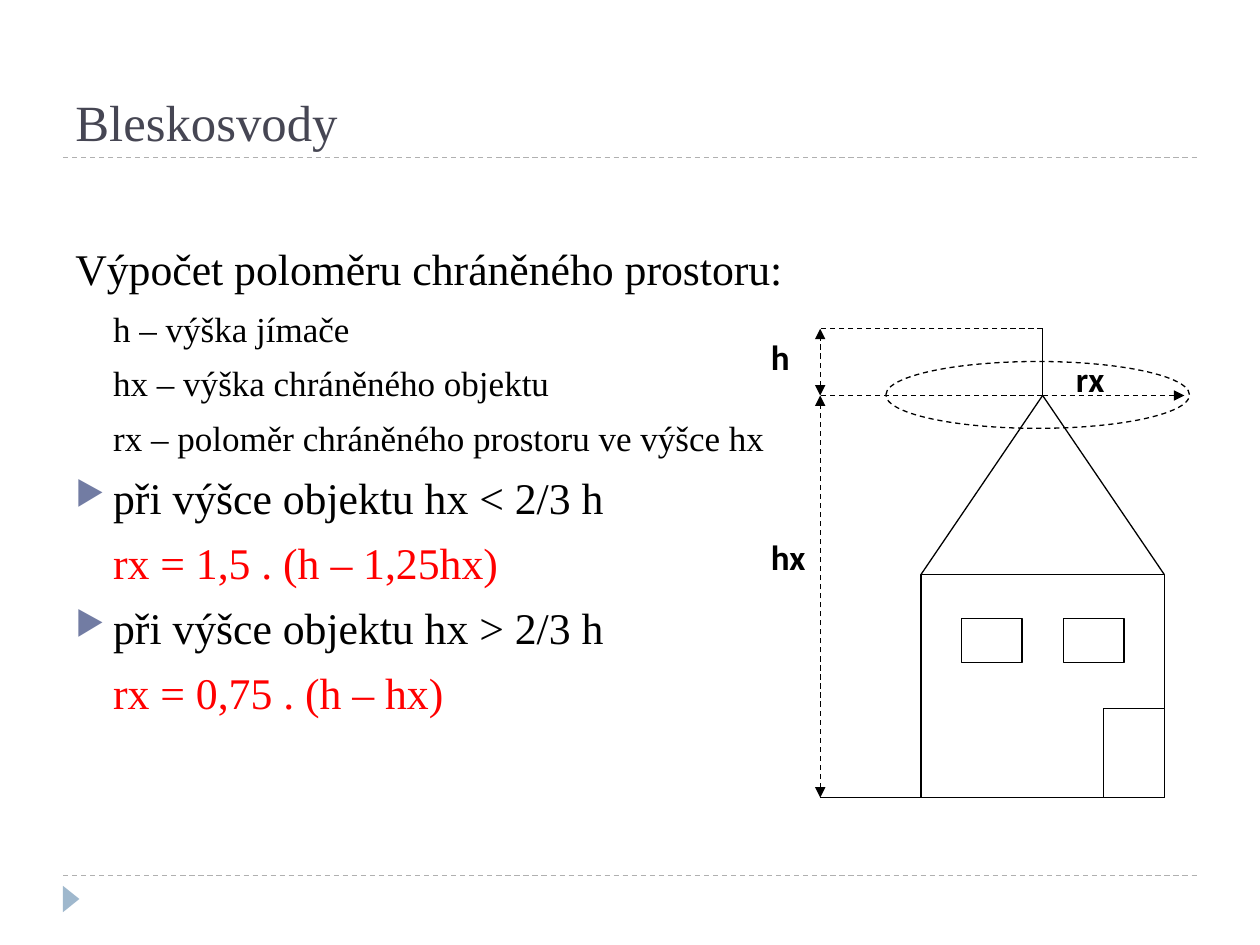
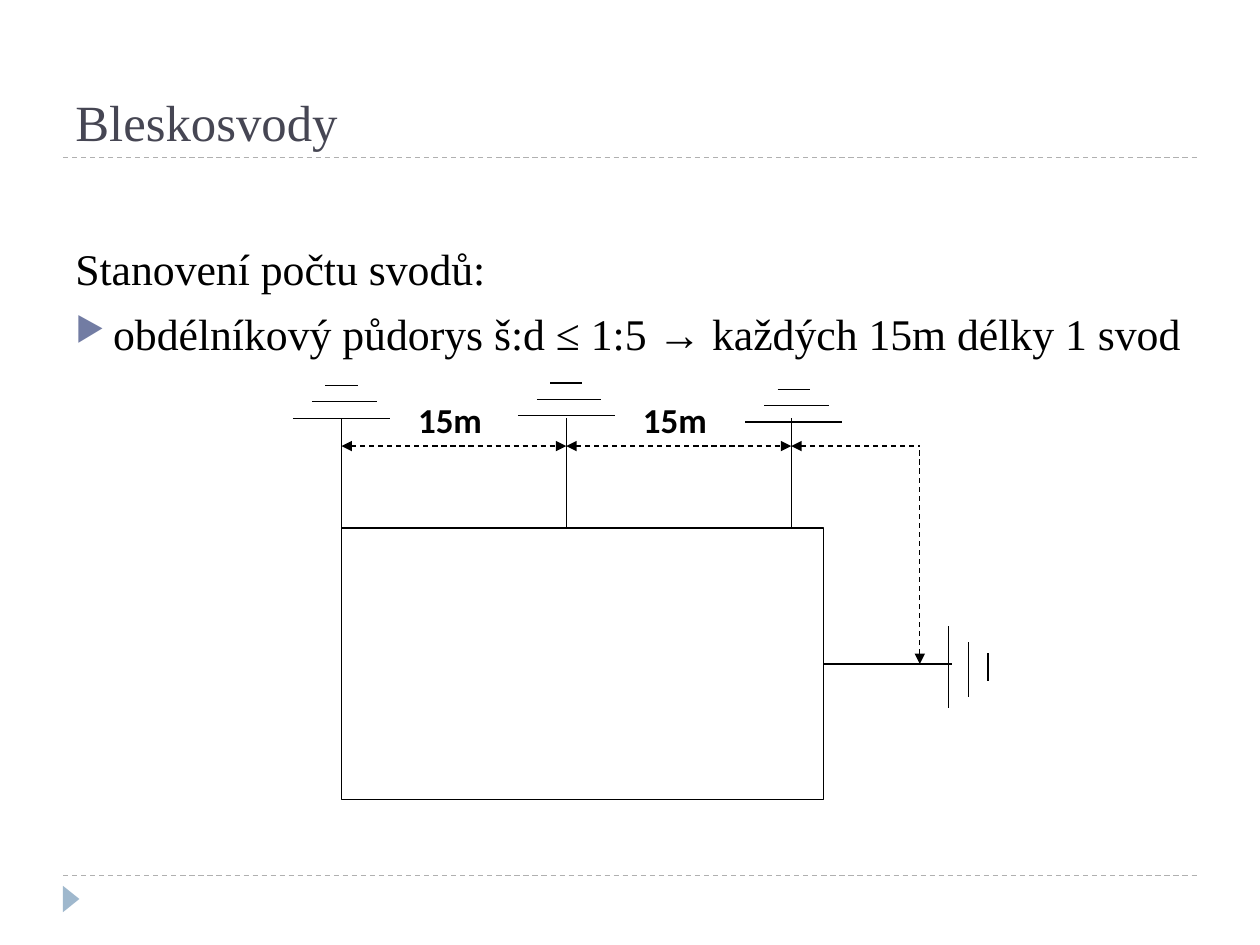
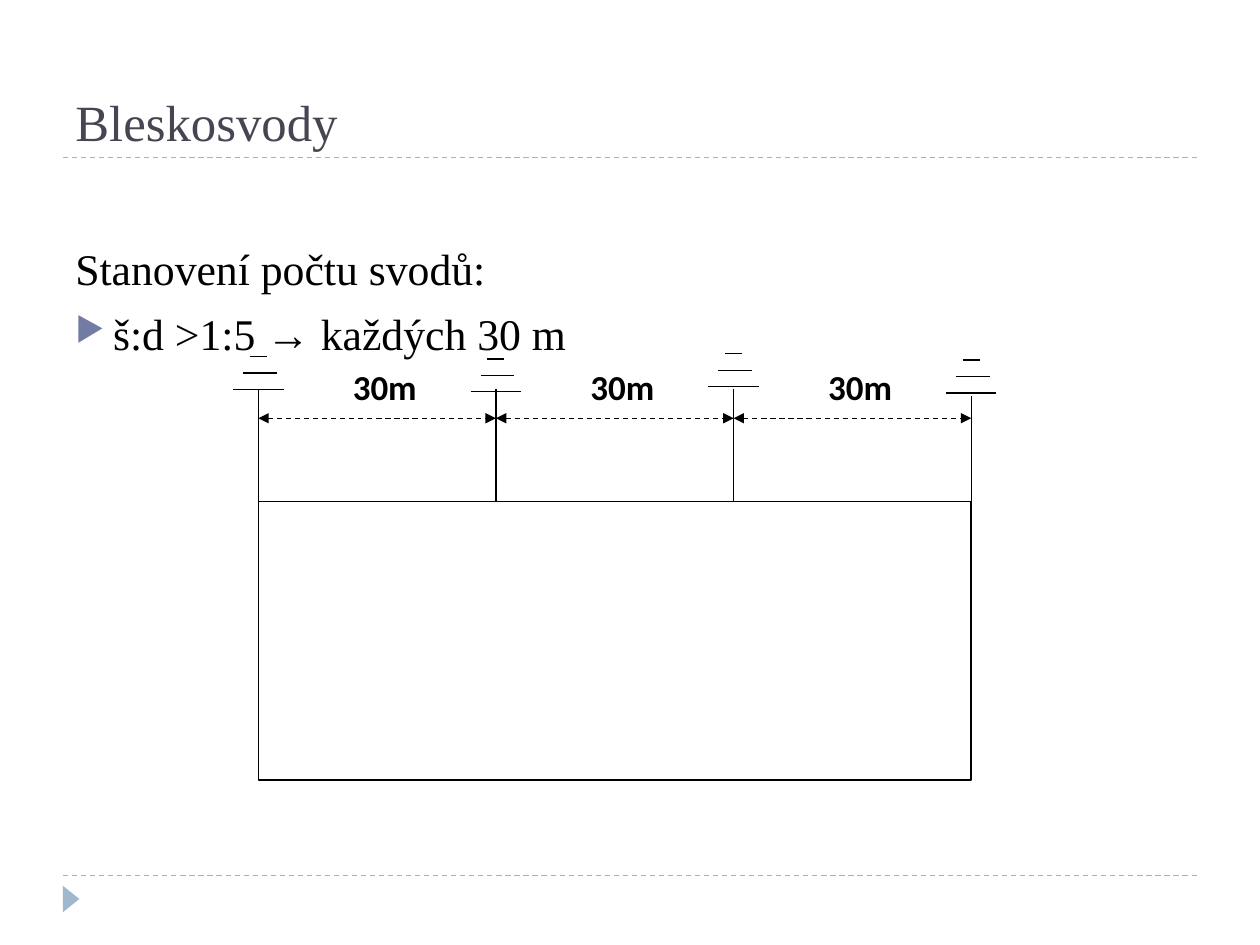
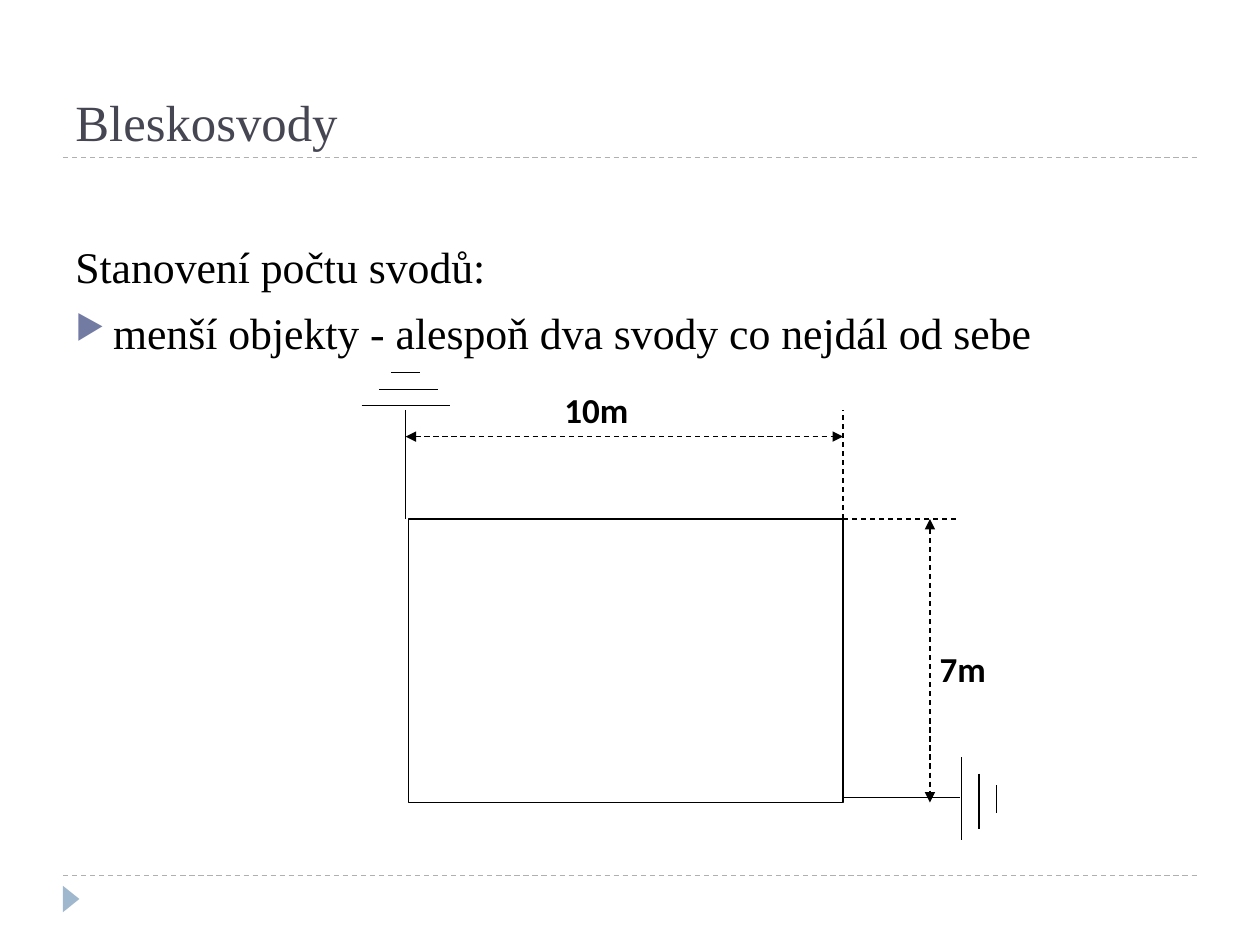
from dataclasses import dataclass, field
from typing import Any, Optional

from lxml.etree import SubElement
from pptx import Presentation
from pptx.dml.color import RGBColor
from pptx.enum.dml import MSO_LINE
from pptx.enum.shapes import MSO_CONNECTOR, MSO_SHAPE
from pptx.enum.text import MSO_ANCHOR
from pptx.oxml.ns import qn
from pptx.slide import Slide
from pptx.util import Pt


# Theme: colours, fonts and sizes
@dataclass(frozen=True)
class Theme:
    ink: RGBColor = RGBColor(0x00, 0x00, 0x00)
    paper: RGBColor = RGBColor(0xFF, 0xFF, 0xFF)
    title: RGBColor = RGBColor(0x46, 0x46, 0x53)
    formula: RGBColor = RGBColor(0xFF, 0x00, 0x00)
    bullet: RGBColor = RGBColor(0x72, 0x7C, 0xA3)
    rule: RGBColor = RGBColor(0xB0, 0xB0, 0xB0)
    marker: RGBColor = RGBColor(0x9F, 0xB8, 0xCD)
    serif: str = "Times New Roman"
    sans: str = "Calibri"
    title_size: float = 29
    body_size: float = 25
    term_size: float = 20
    label_size: float = 20
    line_width: float = 0.75
    indent: float = 21.6
    gap: float = 7.2


THEME = Theme()
Point = tuple[float, float]


# Repeated elements
@dataclass(frozen=True)
class Box:
    left: float
    top: float
    width: float
    height: float

    @property
    def right(self) -> float:
        return self.left + self.width

    @property
    def bottom(self) -> float:
        return self.top + self.height

    def lengths(self) -> list[Pt]:
        return [Pt(v) for v in (self.left, self.top, self.width, self.height)]


@dataclass(frozen=True)
class Stroke:
    start: Point
    end: Point
    dashed: bool = False
    arrows: tuple[str, ...] = ()
    color: RGBColor = THEME.ink


@dataclass(frozen=True)
class Earth:
    """Earth electrode: three shrinking bars, stacked away from the building."""
    x: float
    y: float
    length: float
    step: float = 9.4
    sideways: bool = False


@dataclass(frozen=True)
class Label:
    text: str
    box: Box
    margins: dict[str, float] = field(default_factory=dict)


@dataclass(frozen=True)
class BodyStyle:
    size: float = THEME.body_size
    color: RGBColor = THEME.ink
    first_indent: float = 0
    bulleted: bool = False


HEADING = BodyStyle(first_indent=-THEME.indent)
TERM = BodyStyle(size=THEME.term_size)
CASE = BodyStyle(first_indent=-THEME.indent, bulleted=True)
FORMULA = BodyStyle(color=THEME.formula)
BodyLine = tuple[str, BodyStyle]

BOTH_ENDS = ("headEnd", "tailEnd")
START = ("headEnd",)
END = ("tailEnd",)

TITLE_BOX = Box(36, 12.2, 648, 77.8)
BODY_BOX = Box(36, 95.8, 648, 388.8)
DOWN_CONDUCTORS = "Stanovení počtu svodů:"


# Drawing
def apply(target: Any, values: dict[str, Any]) -> None:
    for name, value in values.items():
        setattr(target, name, value)


def set_font(font: Any, name: str, size: float, color: RGBColor, bold: bool = False) -> None:
    apply(font, {"name": name, "size": Pt(size), "bold": bold})
    font.color.rgb = color


def draw_stroke(slide: Slide, stroke: Stroke, joined: Optional[tuple[Any, int]] = None) -> None:
    ends = [Pt(v) for v in (*stroke.start, *stroke.end)]
    connector = slide.shapes.add_connector(MSO_CONNECTOR.STRAIGHT, *ends)
    if joined:
        connector.begin_connect(*joined)
    connector.line.color.rgb = stroke.color
    apply(connector.line, {
        "width": Pt(THEME.line_width),
        "dash_style": MSO_LINE.DASH if stroke.dashed else MSO_LINE.SOLID,
    })
    properties = connector._element.spPr
    for end in stroke.arrows:
        SubElement(properties.find(qn("a:ln")), qn(f"a:{end}"), type="triangle")
    SubElement(properties, qn("a:effectLst"))


def draw_shape(slide: Slide, kind: MSO_SHAPE, box: Box, fill: Optional[RGBColor] = THEME.paper,
               line: Optional[RGBColor] = THEME.ink, dashed: bool = False) -> Any:
    shape = slide.shapes.add_shape(kind, *box.lengths())
    shape.shadow.inherit = False
    if fill is None:
        shape.fill.background()
    else:
        shape.fill.solid()
        shape.fill.fore_color.rgb = fill
    if line is None:
        shape.line.fill.background()
    else:
        shape.line.color.rgb = line
        shape.line.width = Pt(THEME.line_width)
        if dashed:
            shape.line.dash_style = MSO_LINE.DASH
    return shape


def draw_rect(slide: Slide, box: Box, fill: Optional[RGBColor] = THEME.paper) -> Any:
    return draw_shape(slide, MSO_SHAPE.RECTANGLE, box, fill)


def draw_earth(slide: Slide, earth: Earth) -> None:
    for order, share in enumerate((1, 2 / 3, 1 / 3)):
        half = earth.length * share / 2
        shift = earth.length * 0.03 if order == 1 else 0
        away = order * earth.step
        if earth.sideways:
            x, middle = earth.x + away, earth.y + shift
            draw_stroke(slide, Stroke((x, middle - half), (x, middle + half)))
        else:
            middle, y = earth.x + shift, earth.y - away
            draw_stroke(slide, Stroke((middle - half, y), (middle + half, y)))


def add_text_box(slide: Slide, box: Box, values: dict[str, Any]) -> Any:
    text_box = slide.shapes.add_textbox(*box.lengths())
    apply(text_box.text_frame, {"word_wrap": True, **values})
    return text_box


def draw_label(slide: Slide, label: Label) -> None:
    margins = {name: Pt(value) for name, value in label.margins.items()}
    frame = add_text_box(slide, label.box, margins).text_frame
    run = frame.paragraphs[0].add_run()
    run.text = label.text
    set_font(run.font, THEME.sans, THEME.label_size, THEME.ink, bold=True)


def draw_body(slide: Slide, lines: list[BodyLine], top_margin: float) -> None:
    body = add_text_box(slide, BODY_BOX, {"margin_top": Pt(top_margin)})
    body.line.color.rgb = THEME.paper
    body.line.width = Pt(THEME.line_width)
    frame = body.text_frame
    for order, (text, style) in enumerate(lines):
        paragraph = frame.add_paragraph() if order else frame.paragraphs[0]
        paragraph.space_before = Pt(THEME.gap if order else 0)
        run = paragraph.add_run()
        run.text = text
        set_font(run.font, THEME.serif, style.size, style.color)
        properties = paragraph._p.get_or_add_pPr()
        properties.set("marL", str(Pt(THEME.indent)))
        properties.set("indent", str(Pt(style.first_indent)))
        if style.bulleted:
            color = SubElement(properties, qn("a:buClr"))
            SubElement(color, qn("a:srgbClr"), val=str(THEME.bullet))
            SubElement(properties, qn("a:buSzPct"), val="76000")
            SubElement(properties, qn("a:buChar"), char="▶")


def start_slide(deck: Any, lines: list[BodyLine], top_margin: float = 42.5) -> Slide:
    """Shared frame: rules, corner marker, title and body text."""
    slide = deck.slides.add_slide(deck.slide_layouts[6])
    for y in (500.4, 90):
        draw_stroke(slide, Stroke((36, y), (684, y), dashed=True, color=THEME.rule))
    marker = draw_shape(slide, MSO_SHAPE.ISOSCELES_TRIANGLE, Box(33.1, 509, 15.1, 9.4),
                        THEME.marker, line=None)
    marker.rotation = 90
    frame = add_text_box(slide, TITLE_BOX, {"vertical_anchor": MSO_ANCHOR.BOTTOM}).text_frame
    run = frame.paragraphs[0].add_run()
    run.text = "Bleskosvody"
    set_font(run.font, THEME.serif, THEME.title_size, THEME.title)
    draw_body(slide, lines, top_margin)
    return slide


# Slide 1: radius of the protected space
def build_protected_radius(deck: Any) -> None:
    slide = start_slide(deck, [
        ("Výpočet poloměru chráněného prostoru:", HEADING),
        ("h – výška jímače", TERM),
        ("hx – výška chráněného objektu", TERM),
        ("rx – poloměr chráněného prostoru ve výšce hx", TERM),
        ("při výšce objektu hx < 2/3 h", CASE),
        ("rx = 1,5 . (h – 1,25hx)", FORMULA),
        ("při výšce objektu hx > 2/3 h", CASE),
        ("rx = 0,75 . (h – hx)", FORMULA),
    ])
    walls = Box(526.3, 328.3, 139, 127.5)
    apex = (walls.left + walls.width / 2, 226)
    mast_top = (apex[0], 187.9)
    scale_x = 468.7
    scale_top, scale_roof, scale_ground = (
        (scale_x, y) for y in (mast_top[1], apex[1], walls.bottom))

    draw_shape(slide, MSO_SHAPE.OVAL, Box(506.2, 206.6, 173.5, 38.2), dashed=True)
    draw_rect(slide, walls)
    for stroke in (
        Stroke((walls.left, walls.top), apex),
        Stroke(apex, (walls.right, walls.top)),
        Stroke(apex, mast_top),
        Stroke(apex, (676.8, apex[1]), True, END),
        Stroke(apex, scale_roof, True),
        Stroke(mast_top, scale_top, True),
        Stroke((walls.left, walls.bottom), scale_ground),
        Stroke(scale_ground, scale_roof, True, BOTH_ENDS),
        Stroke(scale_roof, scale_top, True, BOTH_ENDS),
    ):
        draw_stroke(slide, stroke)
    for text, left, top in (("h", 433.4, 187.9), ("hx", 433.4, 302.4), ("rx", 607.7, 200.9)):
        draw_label(slide, Label(text, Box(left, top, 46, 38)))

    door = Box(walls.right - 34.6, walls.bottom - 51, 34.6, 51)
    windows = [Box(left, 353.5, 34.6, 25.2) for left in (549.4, 607.7)]
    for opening in (door, *windows):
        draw_rect(slide, opening)


# Slide 2: rectangular plan, a conductor every 15 m
def build_every_15m(deck: Any) -> None:
    slide = start_slide(deck, [
        (DOWN_CONDUCTORS, HEADING),
        ("obdélníkový půdorys š:d ≤ 1:5 → každých 15m délky 1 svod", CASE),
    ])
    plan = Box(195.1, 301.7, 275.6, 155.4)
    building = draw_rect(slide, plan)
    spacing, dimension_y, corner_x = 128.5, 254.9, 525.6
    conductors = [plan.left + order * spacing for order in range(3)]
    side_y = plan.top + plan.height / 2

    for x, earth_x, earth_y in zip(conductors, (195.1, 323.6, 453.6), (239, 237.6, 241.2)):
        draw_stroke(slide, Stroke((x, plan.top), (x, 239)))
        draw_earth(slide, Earth(earth_x, earth_y, 55.4))
    for x in conductors[:-1]:
        draw_stroke(slide, Stroke((x, dimension_y), (x + spacing, dimension_y), True, BOTH_ENDS))
        draw_label(slide, Label("15m", Box(x + 36.7, 223.9, 73.4, 46.8)))

    draw_stroke(slide, Stroke((plan.right, side_y), (544.3, side_y)), (building, 3))
    draw_earth(slide, Earth(542.2, 381.2, 46.8, 11.2, sideways=True))
    corner = (corner_x, dimension_y)
    draw_stroke(slide, Stroke((corner_x, side_y), corner, True, START))
    draw_stroke(slide, Stroke((conductors[-1], dimension_y), corner, True, START))


# Slide 3: long plan, a conductor every 30 m
def build_every_30m(deck: Any) -> None:
    slide = start_slide(deck, [
        (DOWN_CONDUCTORS, HEADING),
        ("š:d >1:5 → každých 30 m", CASE),
    ])
    plan = Box(147.6, 286.6, 407.4, 159.1)
    draw_rect(slide, plan, fill=None)
    spacing, dimension_y = plan.width / 3, 239
    conductors = [plan.left + order * spacing for order in range(4)]
    drops = (0, 0, 0, 4)
    for x, drop, earth_y in zip(conductors, drops, (222.5, 223.9, 221, 224.6)):
        draw_stroke(slide, Stroke((x, plan.top + drop), (x, 222.5 + drop)))
        draw_earth(slide, Earth(x, earth_y, 28.9))
    margins = {"margin_left": 5, "margin_right": 5, "margin_top": 2.2, "margin_bottom": 2.2}
    for x in conductors[:-1]:
        draw_stroke(slide, Stroke((x, dimension_y), (x + spacing, dimension_y), True, BOTH_ENDS))
        draw_label(slide, Label("30m", Box(x + 49, 206.6, 58.3, 47.5), margins))


# Slide 4: small building, two conductors far apart
def build_small_building(deck: Any) -> None:
    slide = start_slide(deck, [
        (DOWN_CONDUCTORS, HEADING),
        ("menší objekty - alespoň dva svody co nejdál od sebe", CASE),
    ], top_margin=41.5)
    plan = Box(233.3, 296.6, 248.4, 162)
    corner = (plan.right, plan.top)
    conductor_x, conductor_top, side_y, side_end, height_x = 231.8, 234, 455.8, 548.6, 531.4
    draw_rect(slide, plan)
    for stroke in (
        Stroke((conductor_x, 249.5), (plan.right, 249.5), True, BOTH_ENDS),
        Stroke(corner, (plan.right, conductor_top), True),
        Stroke(corner, (side_end, plan.top), True),
        Stroke((height_x, plan.top), (height_x, plan.bottom), True, BOTH_ENDS),
        Stroke((conductor_x, plan.top), (conductor_x, conductor_top)),
        Stroke((plan.right, side_y), (side_end, side_y)),
    ):
        draw_stroke(slide, stroke)
    draw_earth(slide, Earth(conductor_x, 231.8, 50.4))
    draw_earth(slide, Earth(549.4, 456.5, 47.5, 10, sideways=True))
    for text, left, top in (("10m", 315.4, 218.2), ("7m", 529.9, 366.5)):
        draw_label(slide, Label(text, Box(left, top, 100, 46.8)))


def main() -> None:
    deck = Presentation()
    apply(deck, {"slide_width": Pt(720), "slide_height": Pt(540)})
    for build in (build_protected_radius, build_every_15m, build_every_30m, build_small_building):
        build(deck)
    deck.save("out.pptx")


if __name__ == "__main__":
    main()
